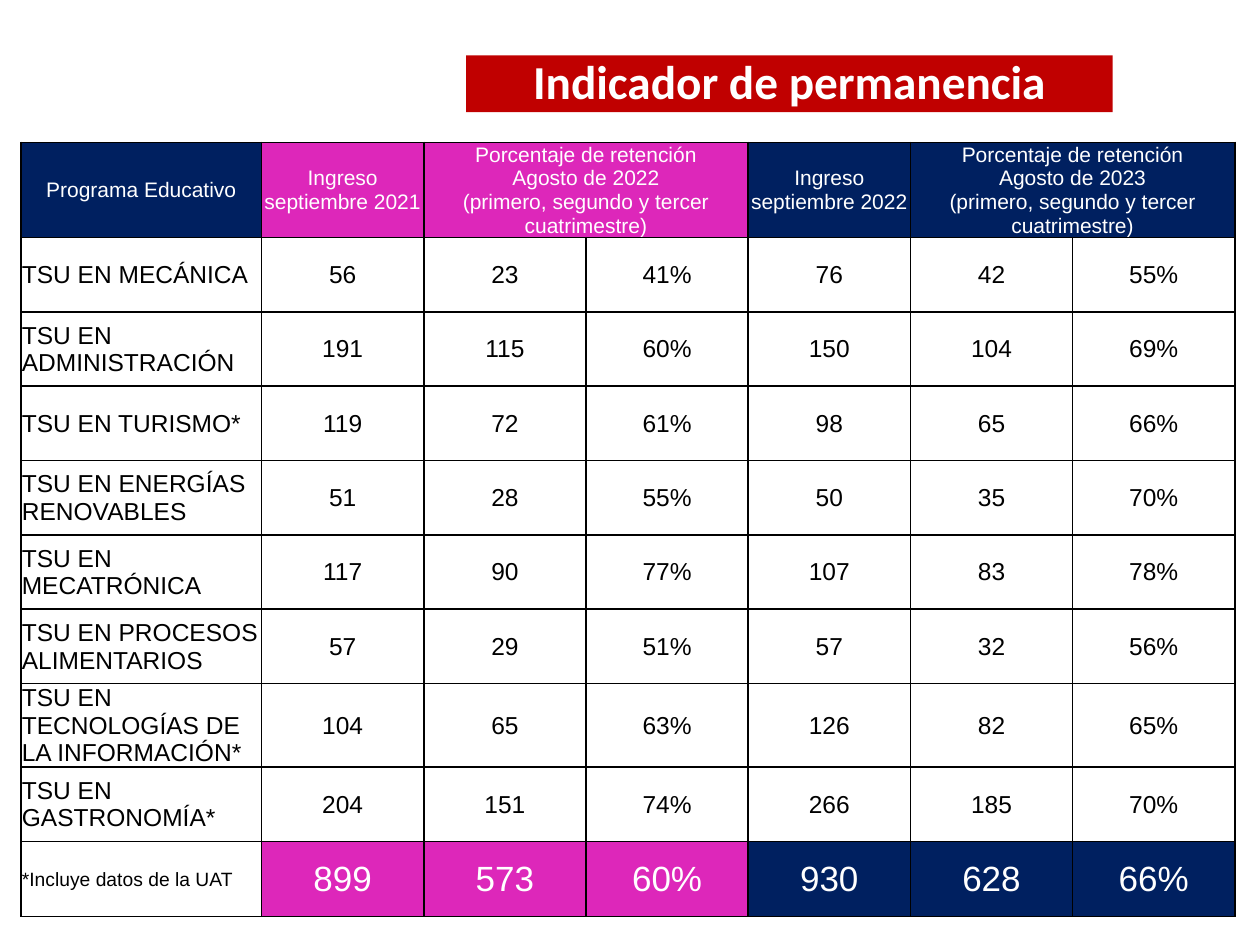
from copy import deepcopy
from lxml.etree import SubElement
from pptx import Presentation
from pptx.dml.color import RGBColor
from pptx.enum.text import MSO_ANCHOR as ANCHOR, MSO_AUTO_SIZE as AUTOSIZE, PP_ALIGN as ALIGN
from pptx.oxml.ns import qn
from pptx.util import Pt

TITLE = "Indicador de permanencia"
WHITE, BLACK, RED, PINK, NAVY = "FFFFFF", "000000", "C00000", "DD27BA", "002060"
GROUP_FILLS = [NAVY] + [PINK] * 3 + [NAVY] * 3

HEADER = [
    "Programa Educativo",
    "Ingreso septiembre 2021",
    "Porcentaje de retención\vAgosto de 2022\v(primero, segundo y tercer cuatrimestre)",
    "",
    "Ingreso septiembre 2022",
    "Porcentaje de retención\vAgosto de 2023\v(primero, segundo y tercer cuatrimestre)",
    "",
]
PROGRAMS = [
    ["TSU EN MECÁNICA", "56", "23", "41%", "76", "42", "55%"],
    ["TSU EN ADMINISTRACIÓN", "191", "115", "60%", "150", "104", "69%"],
    ["TSU EN TURISMO*", "119", "72", "61%", "98", "65", "66%"],
    ["TSU EN ENERGÍAS RENOVABLES", "51", "28", "55%", "50", "35", "70%"],
    ["TSU EN MECATRÓNICA", "117", "90", "77%", "107", "83", "78%"],
    ["TSU EN PROCESOS ALIMENTARIOS", "57", "29", "51%", "57", "32", "56%"],
    ["TSU EN TECNOLOGÍAS DE LA INFORMACIÓN*", "104", "65", "63%", "126", "82", "65%"],
    ["TSU EN GASTRONOMÍA*", "204", "151", "74%", "266", "185", "70%"],
]
TOTALS = ["*Incluye datos de la UAT", "899", "573", "60%", "930", "628", "66%"]
ROWS = [HEADER, *PROGRAMS, TOTALS]
LAST = len(ROWS) - 1
COL_WIDTHS = [137.5] + [92.7] * 6
ROW_HEIGHTS = [48.2] + [42.5] * len(PROGRAMS) + [43]


def rgb(color):
    return RGBColor.from_string(color)


def format_text(p, font, size, color, bold=False):
    for r in p.runs:
        r.font.name, r.font.size, r.font.bold = font, Pt(size), bold
        r.font.color.rgb = rgb(color)
    for br in p._p.findall(qn("a:br")):
        br.append(deepcopy(p.runs[0]._r.rPr))


def add_borders(cell):
    tcPr = cell._tc.get_or_add_tcPr()
    for i, side in enumerate(("lnL", "lnR", "lnT", "lnB")):
        ln = SubElement(tcPr, qn(f"a:{side}"), w=str(Pt(1)))
        fill = SubElement(ln, qn("a:solidFill"))
        SubElement(fill, qn("a:srgbClr"), val=BLACK)
        tcPr.insert(i, ln)


def cell_style(row, col):
    if row == 0:
        return GROUP_FILLS[col], WHITE, 12
    if row < LAST:
        return WHITE, BLACK, 14
    return (GROUP_FILLS[col], WHITE, 20) if col else (WHITE, BLACK, 11)


def add_title(slide):
    sp = slide.shapes.title
    sp.left, sp.top, sp.width, sp.height = Pt(266.4), Pt(31.7), Pt(369.4), Pt(32.4)
    sp.fill.solid()
    sp.fill.fore_color.rgb = rgb(RED)
    tf = sp.text_frame
    tf.text = TITLE
    tf.auto_size = AUTOSIZE.NONE
    tf.vertical_anchor = ANCHOR.MIDDLE
    p = tf.paragraphs[0]
    p.alignment, p.line_spacing = ALIGN.CENTER, 0.9
    format_text(p, "Calibri", 27, WHITE, bold=True)


def add_retention_table(slide):
    table = slide.shapes.add_table(
        len(ROWS), len(HEADER), Pt(12), Pt(81.4),
        Pt(sum(COL_WIDTHS)), Pt(sum(ROW_HEIGHTS))).table
    table.first_row = table.horz_banding = False
    for column, width in zip(table.columns, COL_WIDTHS):
        column.width = Pt(width)
    for row, height in zip(table.rows, ROW_HEIGHTS):
        row.height = Pt(height)
    for i, texts in enumerate(ROWS):
        for j, text in enumerate(texts):
            cell = table.cell(i, j)
            fill, color, size = cell_style(i, j)
            cell.fill.solid()
            cell.fill.fore_color.rgb = rgb(fill)
            cell.margin_left = cell.margin_right = cell.margin_top = Pt(0.5)
            cell.margin_bottom = Pt(0)
            cell.vertical_anchor = ANCHOR.MIDDLE
            add_borders(cell)
            cell.text_frame.text = text
            p = cell.text_frame.paragraphs[0]
            p.alignment = ALIGN.CENTER if i == 0 or j else ALIGN.LEFT
            format_text(p, "Arial", size, color)
    for j in (2, 5):
        table.cell(0, j).merge(table.cell(0, j + 1))


def main():
    prs = Presentation()
    prs.slide_width, prs.slide_height = Pt(720), Pt(540)
    slide = prs.slides.add_slide(prs.slide_layouts[5])
    add_title(slide)
    add_retention_table(slide)
    prs.save("out.pptx")


if __name__ == "__main__":
    main()
